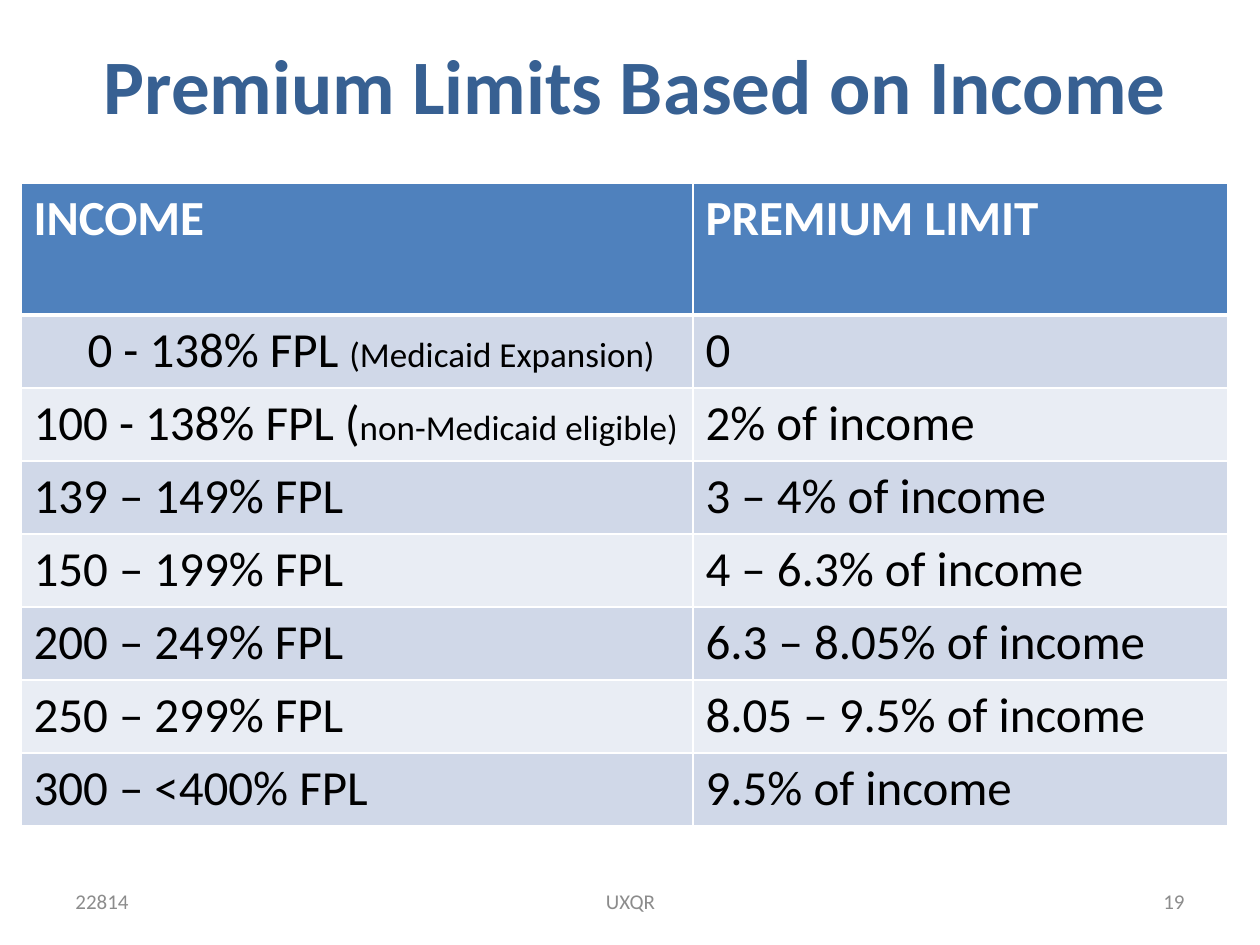
from dataclasses import dataclass

from lxml import etree
from pptx import Presentation
from pptx.dml.color import RGBColor
from pptx.enum.text import MSO_ANCHOR, PP_ALIGN
from pptx.oxml.ns import qn
from pptx.util import Emu, Pt

LEFT, CENTER, RIGHT = PP_ALIGN.LEFT, PP_ALIGN.CENTER, PP_ALIGN.RIGHT
MIDDLE = MSO_ANCHOR.MIDDLE
PX_PER_INCH = 126


@dataclass(frozen=True)
class Theme:
    font: str = "Calibri"
    title: str = "376092"
    header: str = "4F81BD"
    bands: tuple = ("D0D8E8", "E9EDF4")
    white: str = "FFFFFF"
    black: str = "000000"
    footer: str = "8C8C8C"
    title_size: int = 44
    table_size: int = 28
    note_size: int = 20
    footer_size: int = 12


THEME = Theme()


def px(length):
    return Emu(length * 914400 // PX_PER_INCH)


def format_paragraph(paragraph, size, color, bold=False, alignment=LEFT):
    paragraph.alignment = alignment
    font = paragraph.font
    font.name = THEME.font
    font.size = Pt(size)
    font.bold = bold
    font.color.rgb = RGBColor.from_string(color)


presentation = Presentation()
presentation.slide_width = px(1260)
presentation.slide_height = px(945)
slide = presentation.slides.add_slide(presentation.slide_layouts[5])

title = slide.shapes.title
title.left, title.top, title.width, title.height = px(32), px(21), px(1207), px(125)
title.text_frame.text = "Premium Limits Based on Income"
title.text_frame.vertical_anchor = MIDDLE
format_paragraph(title.text_frame.paragraphs[0], THEME.title_size, THEME.title, True, CENTER)

rows = [
    ("INCOME", "", "PREMIUM LIMIT"),
    ("0 - 138% FPL ", "(Medicaid Expansion)", "0"),
    ("100 - 138% FPL (", "non-Medicaid eligible)", "2% of income"),
    ("139 – 149% FPL", "", "3 – 4% of income"),
    ("150 – 199% FPL", "", "4 – 6.3% of income"),
    ("200 – 249% FPL", "", "6.3 – 8.05% of income"),
    ("250 – 299% FPL", "", "8.05 – 9.5% of income"),
    ("300 – <400% FPL", "", "9.5% of income"),
]
column_widths = (672, 535)
header_height, row_height = 132, 73
table_height = header_height + row_height * (len(rows) - 1)
table = slide.shapes.add_table(
    len(rows), len(column_widths), px(21), px(183), px(sum(column_widths)), px(table_height)
).table
for column, width in zip(table.columns, column_widths):
    column.width = px(width)

for row_index, (income, note, limit) in enumerate(rows):
    is_header = row_index == 0
    table.rows[row_index].height = px(header_height if is_header else row_height)
    fill = THEME.header if is_header else THEME.bands[(row_index - 1) % 2]
    for column_index, text in enumerate((income, limit)):
        cell = table.cell(row_index, column_index)
        paragraph = cell.text_frame.paragraphs[0]
        paragraph.add_run().text = text
        if note and column_index == 0:
            note_run = paragraph.add_run()
            note_run.text = note
            note_run.font.size = Pt(THEME.note_size)
        text_color = THEME.white if is_header else THEME.black
        format_paragraph(paragraph, THEME.table_size, text_color, is_header)

        properties = cell._tc.get_or_add_tcPr()
        for side in "LRTB":
            heavy = (row_index, side) in ((0, "B"), (1, "T"))
            line = etree.SubElement(properties, qn(f"a:ln{side}"), w=str(Pt(3 if heavy else 1)))
            line_fill = etree.SubElement(line, qn("a:solidFill"))
            etree.SubElement(line_fill, qn("a:srgbClr"), val=THEME.white)
        cell.fill.solid()
        cell.fill.fore_color.rgb = RGBColor.from_string(fill)

indented = table.cell(1, 0).text_frame.paragraphs[0]
indented._p.get_or_add_pPr().set("marL", str(px(54)))

footers = [
    ("22814", 63, 294, LEFT),
    ("UXQR", 431, 399, CENTER),
    ("19", 903, 294, RIGHT),
]
for text, left, width, alignment in footers:
    footer = slide.shapes.add_textbox(px(left), px(876), px(width), px(50))
    frame = footer.text_frame
    frame.word_wrap = True
    frame.vertical_anchor = MIDDLE
    frame.text = text
    format_paragraph(frame.paragraphs[0], THEME.footer_size, THEME.footer, alignment=alignment)

presentation.save("out.pptx")
